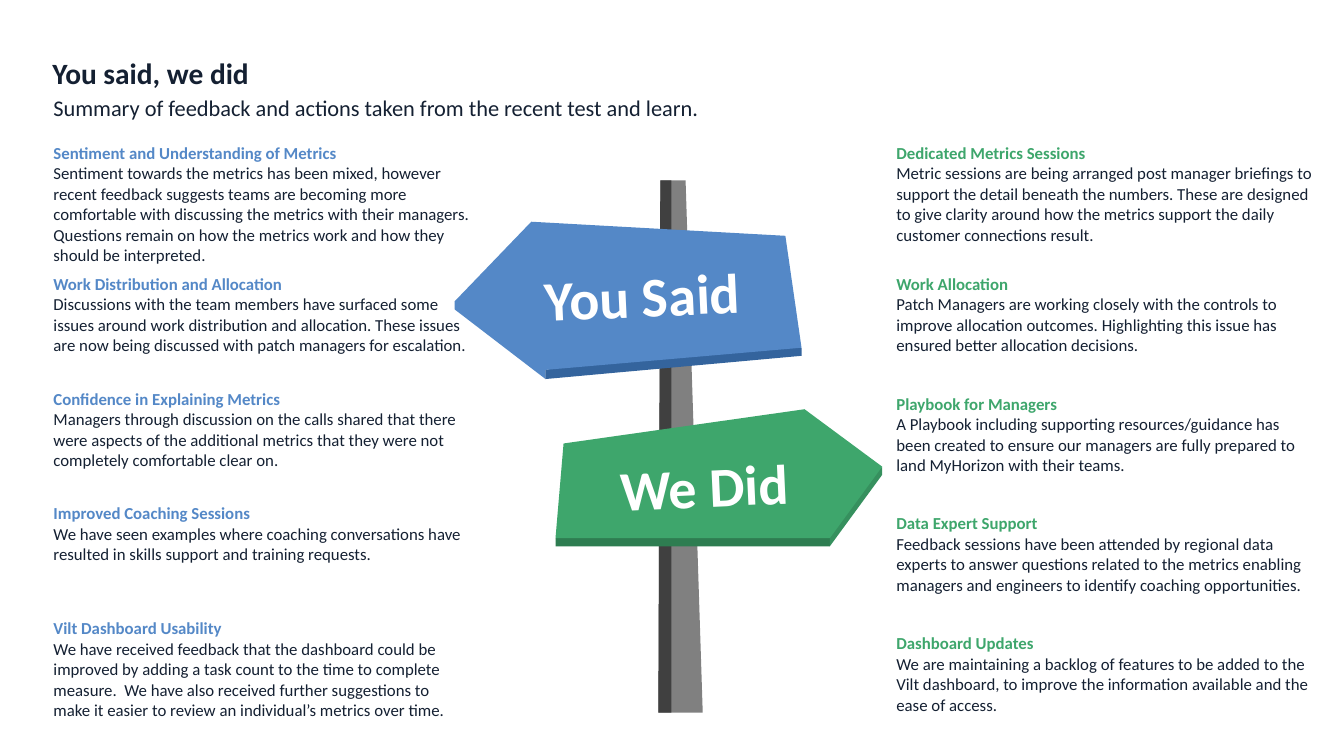
from dataclasses import dataclass

from pptx import Presentation
from pptx import util as u
from pptx.dml.color import RGBColor
from pptx.enum import shapes, text

PX = 9144
FONT = "Calibri"
COLOURS = {
    "ink": "142032", "white": "FFFFFF",
    "post": "808080", "post_edge": "404040",
    "blue": "5488C7", "blue_edge": "34649D",
    "green": "3EA66C", "green_edge": "2E7D51", "green_tip": "36905E",
}


@dataclass
class Face:
    colour: str
    points: list[tuple[int, int]]


@dataclass
class Label:
    text: str
    box: tuple[int, int, int, int]
    colour: str


@dataclass
class Column:
    left: int
    colour: str
    heights: list[int]
    entries: list[tuple[str, str]]


POST = [
    Face("post", [(655, 179), (680, 179), (697, 707), (653, 707)]),
    Face("post_edge", [(655, 179), (666, 179), (666, 707), (653, 707)]),
]
GREEN_SIGN = [
    Face("green_edge", [(551, 534), (691, 518), (823, 534), (823, 542), (551, 542)]),
    Face("green_tip", [(823, 534), (837, 495), (875, 463), (875, 471), (823, 542)]),
    Face("green", [(559, 440), (551, 534), (823, 534), (875, 463), (798, 406)]),
]
BLUE_SIGN = [
    Face("blue", [(451, 299), (509, 326), (541, 367), (541, 376), (451, 307)]),
    Face("blue_edge", [(541, 367), (657, 344), (795, 345), (795, 353), (541, 376)]),
    Face("blue", [(779, 234), (527, 220), (451, 299), (541, 367), (795, 345)]),
]
WE_DID = Label("We Did", (604, 443, 189, 77), "green")
YOU_SAID = Label("You Said", (529, 254, 216, 77), "blue")

SAID = Column(43, "blue", [125, 114, 114, 114, 125], [
    ("Sentiment and Understanding of Metrics",
     "Sentiment towards the metrics has been mixed, however recent feedback suggests "
     "teams are becoming more comfortable with discussing the metrics with their "
     "managers. Questions remain on how the metrics work and how they should be "
     "interpreted."),
    ("Work Distribution and Allocation",
     "Discussions with the team members have surfaced some issues around work "
     "distribution and allocation. These issues are now being discussed with patch "
     "managers for escalation. "),
    ("Confidence in Explaining Metrics",
     "Managers through discussion on the calls shared that there were aspects of the "
     "additional metrics that they were not completely comfortable clear on."),
    ("Improved Coaching Sessions",
     "We have seen examples where coaching conversations have resulted in skills "
     "support and training requests."),
    ("Vilt Dashboard Usability",
     "We have received feedback that the dashboard could be improved by adding a task "
     "count to the time to complete measure.  We have also received further "
     "suggestions to make it easier to review an individual’s metrics over time."),
])
DID = Column(879, "green", [130, 119, 119, 119, 119], [
    ("Dedicated Metrics Sessions",
     "Metric sessions are being arranged post manager briefings to support the detail "
     "beneath the numbers. These are designed to give clarity around how the metrics "
     "support the daily customer connections result."),
    ("Work Allocation",
     "Patch Managers are working closely with the controls to improve allocation "
     "outcomes. Highlighting this issue has ensured better allocation decisions."),
    ("Playbook for Managers",
     "A Playbook including supporting resources/guidance has been created to ensure "
     "our managers are fully prepared to land MyHorizon with their teams."),
    ("Data Expert Support",
     "Feedback sessions have been attended by regional data experts to answer "
     "questions related to the metrics enabling managers and engineers to identify "
     "coaching opportunities."),
    ("Dashboard Updates",
     "We are maintaining a backlog of features to be added to the Vilt dashboard, to "
     "improve the information available and the ease of access."),
])


def px(n: int) -> u.Emu:
    return u.Emu(n * PX)


def paint(fill, colour: str) -> None:
    fill.solid()
    fill.fore_color.rgb = RGBColor.from_string(COLOURS[colour])


def write(p, words: str, size: int, colour: str, bold: bool) -> None:
    p.text = words
    p.font.name = FONT
    p.font.size = u.Pt(size)
    p.font.bold = bold
    p.font.color.rgb = RGBColor.from_string(COLOURS[colour])


def draw_heading(s, box: tuple[int, int, int, int], words: str, size: int,
                 bold: bool) -> None:
    tf = s.shapes.add_textbox(*map(px, box)).text_frame
    tf.word_wrap = True
    tf.margin_left = tf.margin_right = tf.margin_top = tf.margin_bottom = 0
    tf.paragraphs[0].line_spacing = 0.9
    write(tf.paragraphs[0], words, size, "ink", bold)


def draw_faces(group, faces: list[Face]) -> None:
    for face in faces:
        start, *rest = face.points
        builder = group.shapes.build_freeform(*start, scale=PX)
        builder.add_line_segments(rest, close=True)
        sp = builder.convert_to_shape()
        sp.shadow.inherit = False
        paint(sp.fill, face.colour)
        sp.line.fill.background()


def draw_sign(s, faces: list[Face], label: Label) -> None:
    group = s.shapes.add_group_shape()
    draw_faces(group, faces)
    sp = group.shapes.add_shape(shapes.MSO_SHAPE.RECTANGLE, *map(px, label.box))
    sp.shadow.inherit = False
    sp.rotation = -2.6
    paint(sp.fill, label.colour)
    sp.line.fill.background()
    tf = sp.text_frame
    tf.word_wrap = False
    tf.vertical_anchor = text.MSO_ANCHOR.MIDDLE
    tf.paragraphs[0].alignment = text.PP_ALIGN.CENTER
    write(tf.paragraphs[0], label.text, 40, "white", True)


def draw_column(s, column: Column) -> None:
    table = s.shapes.add_table(len(column.entries), 1, px(column.left), px(137),
                               px(433), px(sum(column.heights))).table
    table.first_row = table.horz_banding = False
    for row, height, (heading, body) in zip(table.rows, column.heights, column.entries):
        row.height = px(height)
        cell = row.cells[0]
        paint(cell.fill, "white")
        tf = cell.text_frame
        write(tf.paragraphs[0], heading, 12, column.colour, True)
        write(tf.add_paragraph(), body, 12, "ink", False)


def main() -> None:
    prs = Presentation()
    prs.slide_width, prs.slide_height = px(1333), px(750)
    s = prs.slides.add_slide(prs.slide_layouts[6])
    draw_faces(s.shapes.add_group_shape(), POST)
    draw_sign(s, GREEN_SIGN, WE_DID)
    draw_heading(s, (53, 96, 913, 47),
                 "Summary of feedback and actions taken from the recent test and learn.",
                 16, False)
    draw_column(s, SAID)
    draw_sign(s, BLUE_SIGN, YOU_SAID)
    draw_column(s, DID)
    draw_heading(s, (52, 59, 1183, 42), "You said, we did", 21, True)
    prs.save("out.pptx")


if __name__ == "__main__":
    main()
